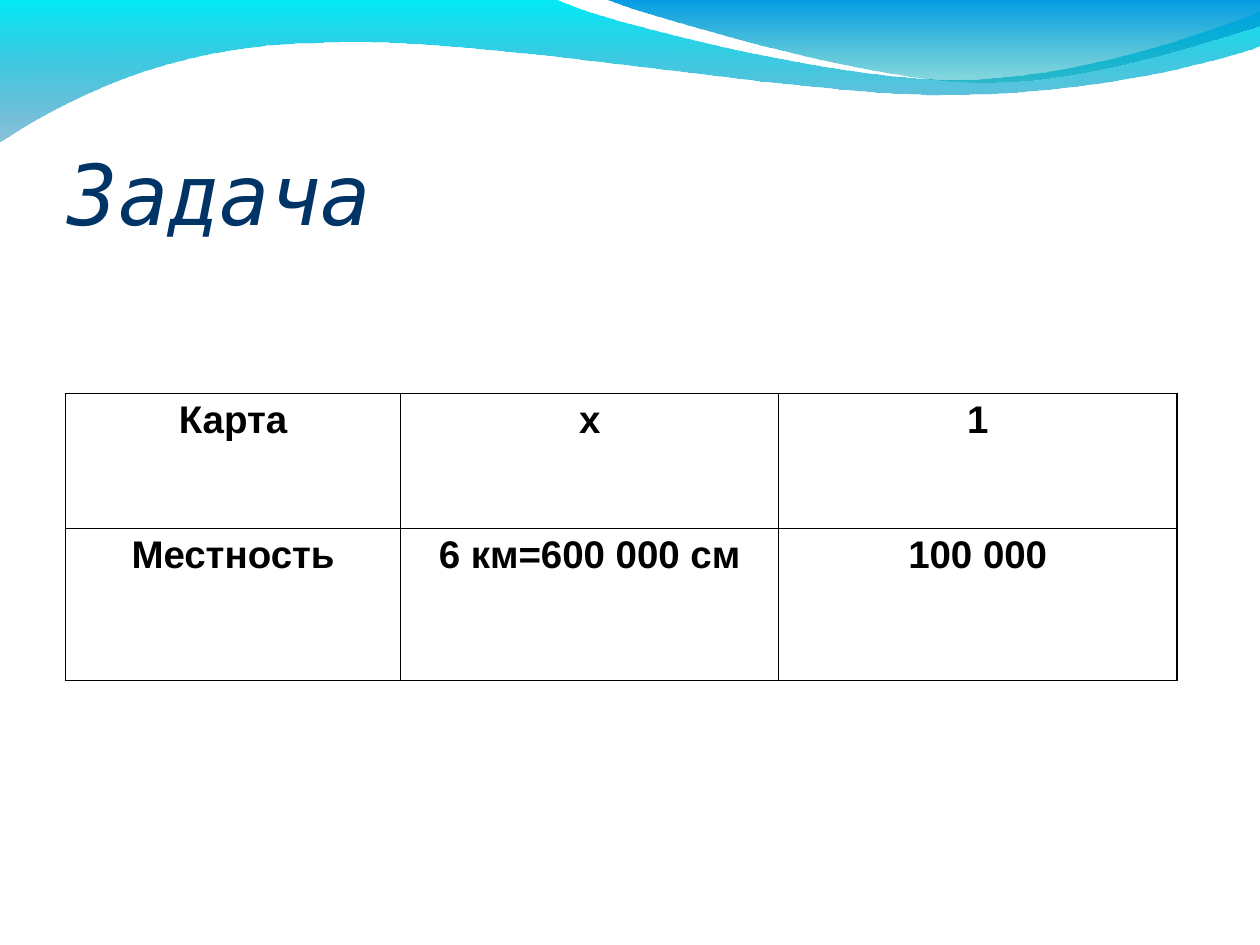
from lxml import etree
from pptx import Presentation
from pptx import util as u
from pptx.dml.color import RGBColor
from pptx.enum import text
from pptx.oxml.ns import qn

W, H = 10, 7.5
COLS, ROWS = (2.66, 3, 3.16), (1.07, 1.21)
THIN, THICK = 0.45, 1.08
CELLS = (("Карта", "х", "1"), ("Местность", "6 км=600 000 см", "100 000"))
TITLE_FONT = {"name": "DejaVu Sans Mono", "size": u.Pt(48), "italic": True}
CELL_FONT = {"name": "Arial", "size": u.Pt(22), "bold": True}
BIG_WAVE = (
    [(0, -0.01)],
    [(4.4, -0.01)],
    [(4.76, 0.17), (6.64, 0.63), (7.58, 0.63)],
    [(8.53, 0.63), (9.58, 0.26), (10, 0.09)],
    [(10.01, 0.36)],
    [(9.83, 0.44), (8.7, 0.76), (7.46, 0.75)],
    [(6.22, 0.75), (3.82, 0.28), (2.57, 0.34)],
    [(1.29, 0.35), (0.46, 0.83), (-0.01, 1.13)],
)
SMALL_WAVE = (
    [(4.79, -0.01)],
    [(5.09, 0.11), (6.82, 0.62), (7.69, 0.65)],
    [(8.56, 0.69), (9.61, 0.32), (10, 0.21)],
    [(10, 0)],
)


def set_color(color, value):
    """Set a colour from a hex string."""
    color.rgb = RGBColor.from_string(value)


def set_text(p, content, font, color):
    """Write one formatted run into a paragraph."""
    r = p.add_run()
    r.text = content
    for name, value in font.items():
        setattr(r.font, name, value)
    set_color(r.font.color, color)


def bend(sp, outline):
    """Merge the lines of each three-point part into one Bezier curve."""
    lines = iter(sp._element.xpath(".//a:path/a:lnTo"))
    for part in outline[1:]:
        first, *others = [next(lines) for _ in part]
        if others:
            first.addprevious(curve := etree.Element(qn("a:cubicBezTo")))
            for line in (first, *others):
                curve.append(line[0])
                line.getparent().remove(line)


def add_wave(s, outline, top, bottom):
    """Draw a curved wave that fades downwards to 45% opacity."""
    points = [(u.Inches(x), u.Inches(y)) for part in outline for x, y in part]
    builder = s.shapes.build_freeform(*points[0])
    builder.add_line_segments(points[1:], close=True)
    sp = builder.convert_to_shape()
    bend(sp, outline)
    sp.shadow.inherit = False
    sp.line.fill.background()
    sp.fill.gradient()
    sp.fill.gradient_angle = 270
    for stop, value in zip(sp.fill.gradient_stops, (top, bottom)):
        set_color(stop.color, value)
    last = sp._element.xpath(".//a:gs/a:srgbClr")[-1]
    etree.SubElement(last, qn("a:alpha"), val="45000")


def add_title(s, content):
    """Add the slide title with a hanging indent."""
    sp = s.shapes.add_textbox(*map(u.Inches, (0.43, 1.07, 8.98, 0.91)))
    tf = sp.text_frame
    tf.word_wrap = True
    p = tf.paragraphs[0]
    pPr = p._p.get_or_add_pPr()
    pPr.set("marL", str(u.Inches(0.38)))
    pPr.set("indent", str(u.Inches(-0.37)))
    set_text(p, content, TITLE_FONT, "003366")


def set_borders(cell, widths):
    """Give a cell black left, right, top and bottom borders."""
    tcPr = cell._tc.get_or_add_tcPr()
    for i, (side, width) in enumerate(zip("LRTB", widths)):
        ln = etree.Element(qn(f"a:ln{side}"), w=str(u.Pt(width)))
        fill = etree.SubElement(ln, qn("a:solidFill"))
        etree.SubElement(fill, qn("a:srgbClr"), val="000000")
        tcPr.insert(i, ln)


def add_grid(s):
    """Add the table with a heavier left, right and bottom edge."""
    box = (0.52, 3.12, sum(COLS), sum(ROWS))
    table = s.shapes.add_table(len(ROWS), len(COLS), *map(u.Inches, box)).table
    table.first_row = table.horz_banding = False
    for col, width in zip(table.columns, COLS):
        col.width = u.Inches(width)
    for row, height in zip(table.rows, ROWS):
        row.height = u.Inches(height)
    for i, line in enumerate(CELLS):
        for j, content in enumerate(line):
            cell = table.cell(i, j)
            cell.fill.background()
            cell.margin_top = u.Inches(0.07)
            edges = (j == 0, j == len(COLS) - 1, False, i == len(ROWS) - 1)
            set_borders(cell, [THICK if edge else THIN for edge in edges])
            p = cell.text_frame.paragraphs[0]
            p.alignment = text.PP_ALIGN.CENTER
            p.line_spacing = 0.93
            set_text(p, content, CELL_FONT, "000000")


def main():
    """Build and save the slide."""
    prs = Presentation()
    prs.slide_width, prs.slide_height = u.Inches(W), u.Inches(H)
    s = prs.slides.add_slide(prs.slide_layouts[6])
    add_wave(s, BIG_WAVE, "00EBF8", "0079AF")
    add_wave(s, SMALL_WAVE, "009BE5", "00ADB6")
    add_title(s, "Задача")
    add_grid(s)
    prs.save("out.pptx")


if __name__ == "__main__":
    main()
